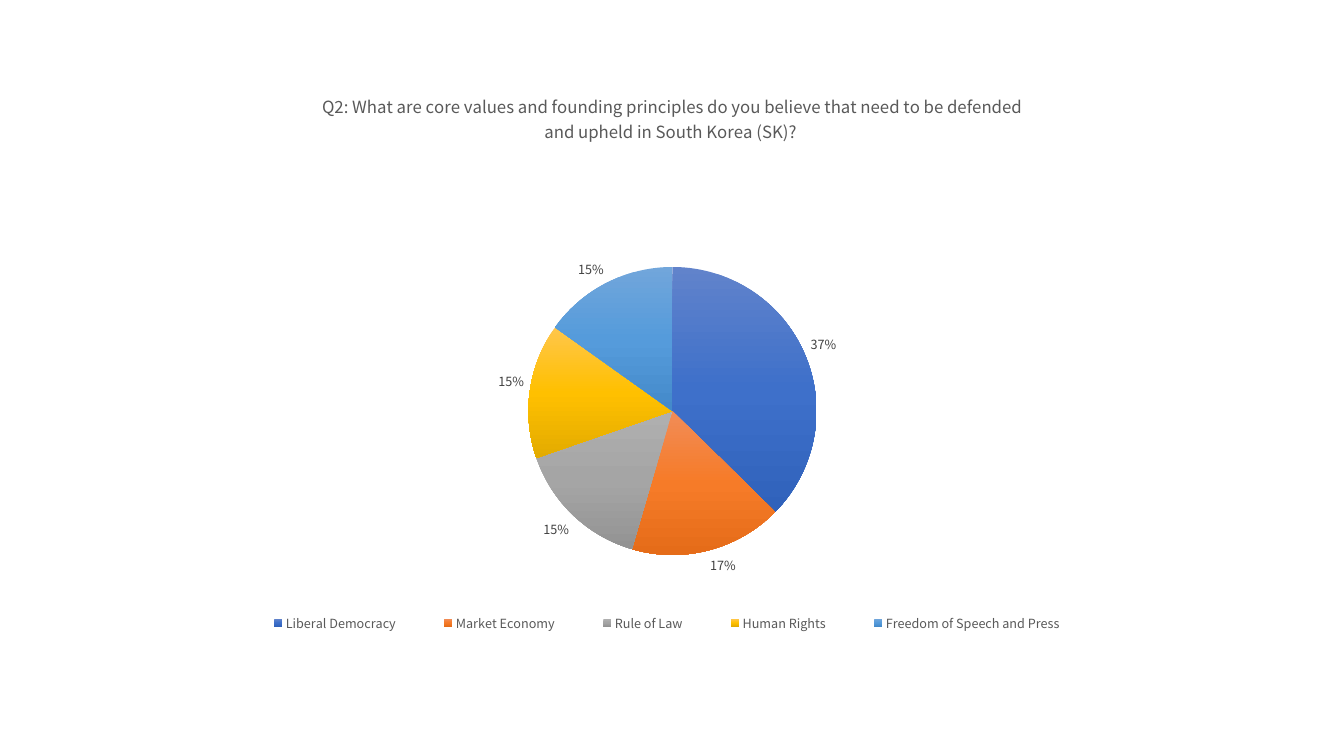
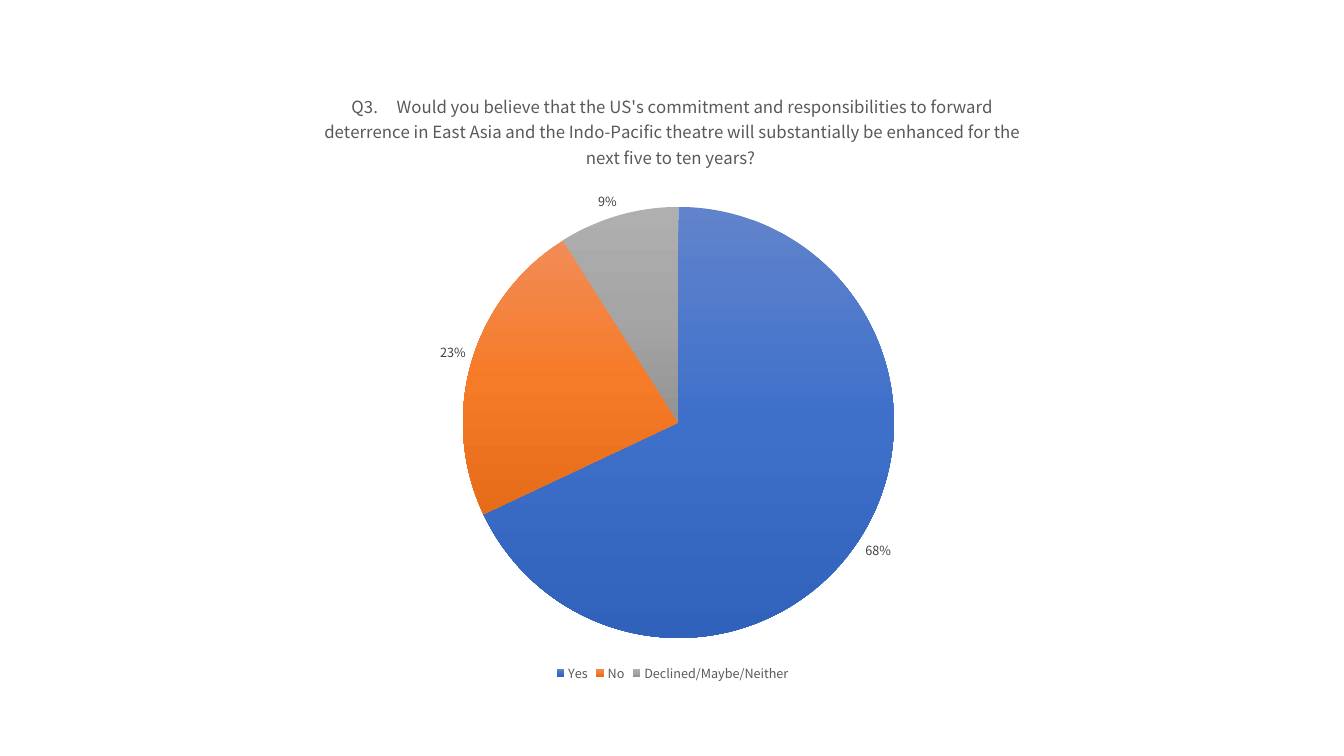
from lxml import etree
from pptx import Presentation
from pptx.chart.data import CategoryChartData as Data
from pptx.dml.color import RGBColor
from pptx.enum.chart import XL_CHART_TYPE as Kind
from pptx.enum.chart import XL_LABEL_POSITION as Spot
from pptx.enum.chart import XL_LEGEND_POSITION as Side
from pptx.oxml import parse_xml
from pptx.oxml.ns import nsdecls, qn
from pptx.util import Pt

WIDE, HIGH = 1344, 756
SCALE = 12192000 / WIDE
BOX = (216, 71, 913, 615)
FONT = "Noto Sans CJK KR"
GREY, DARK = "595959", "404040"
# Top, middle and bottom colour of each slice
SHADES = [
    ("6183CB", "3E70CA", "3062BB"),
    ("F18C57", "F67B28", "E56C19"),
    ("AFAFAF", "A5A5A5", "939393"),
    ("FFC64B", "FFC000", "E3AB00"),
    ("71A6DB", "559BDB", "448ACA"),
]

GAP = chr(160) * 3  # no-break spaces after the question number
Q2 = ("Q2: What are core values and founding principles do you believe "
      "that need to be defended and upheld in South Korea (SK)? ")
Q3 = (f"Q3. {GAP} Would you believe that the US's commitment and "
      "responsibilities to forward deterrence in East Asia and the "
      "Indo-Pacific theatre will substantially be enhanced for the "
      "next five to ten years? ")

# Areas of plot and legend are px inside the chart; None is automatic
PIES = [
    dict(title=Q2, name="Series 1", share=True,
         parts={"Liberal Democracy": 37, "Market Economy": 17,
                "Rule of Law": 15, "Human Rights": 15,
                "Freedom of Speech and Press": 15},
         plot=(0, 196, 913, 288), legend=(14, 538, 874, 28)),
    dict(title=Q3, name=Q3, share=False,
         parts={"Yes": 0.68, "No": 0.23, "Declined/Maybe/Neither": 0.09},
         plot=(247, 136, 431, 431), legend=None),
]


def style(font, size, tint):
    font.name, font.size, font.bold = FONT, Pt(size), False
    font.color.rgb = RGBColor.from_string(tint)


def place(part, index, area, inner=False):
    """Fix a chart part at an area given in px inside the chart."""
    for old in part.findall(qn("c:layout")):
        part.remove(old)
    layout = parse_xml(f"<c:layout {nsdecls('c')}><c:manualLayout/></c:layout>")
    vals = [("layoutTarget", "inner")] if inner else []
    vals += [("xMode", "edge"), ("yMode", "edge")]
    vals += [(key, f"{px / BOX[2 + i % 2]:.4f}")
             for i, (key, px) in enumerate(zip("xywh", area))]
    for key, val in vals:
        etree.SubElement(layout[0], qn(f"c:{key}")).set("val", val)
    part.insert(index, layout)


deck = Presentation()
deck.slide_width, deck.slide_height = round(WIDE * SCALE), round(HIGH * SCALE)

for pie in PIES:
    slide = deck.slides.add_slide(deck.slide_layouts[6])
    data = Data(number_format="General" if pie["share"] else "0%")
    data.categories = list(pie["parts"])
    data.add_series(pie["name"], list(pie["parts"].values()))
    chart = slide.shapes.add_chart(
        Kind.PIE, *[round(px * SCALE) for px in BOX], data).chart
    style(chart.font, 10, "000000")

    chart.has_title = True
    run = chart.chart_title.text_frame.paragraphs[0].add_run()
    run.text = pie["title"]
    style(run.font, 12, GREY)
    chart.chart_title.include_in_layout = False

    chart.has_legend = True
    legend = chart.legend
    legend.position = Side.BOTTOM
    legend.include_in_layout = False
    style(legend.font, 9, GREY)

    plot = chart.plots[0]
    plot.vary_by_categories = True
    plot.has_data_labels = True
    labels = plot.data_labels
    labels.show_percentage = pie["share"]
    labels.show_value = not pie["share"]
    labels.number_format, labels.number_format_is_linked = "0%", False
    labels.position = Spot.OUTSIDE_END
    style(labels.font, 9, DARK)

    for i, shade in enumerate(SHADES[:len(pie["parts"])]):
        form = plot.series[0].points[i].format
        form.line.fill.background()
        form.fill.gradient()
        form.fill.gradient_angle = 270
        stops = form.fill.gradient_stops
        for stop, tint in zip(stops, (shade[0], shade[2])):
            stop.color.rgb = RGBColor.from_string(tint)
        stops[0].position, stops[1].position = 0, 1
        middle = parse_xml(f'<a:gs {nsdecls("a")} pos="50000">'
                           f'<a:srgbClr val="{shade[1]}"/></a:gs>')
        stops[0]._gs.addnext(middle)

    place(chart.element.find(".//" + qn("c:plotArea")), 0, pie["plot"], True)
    if pie["legend"]:
        place(chart.element.find(".//" + qn("c:legend")), 1, pie["legend"])

deck.save("out.pptx")
